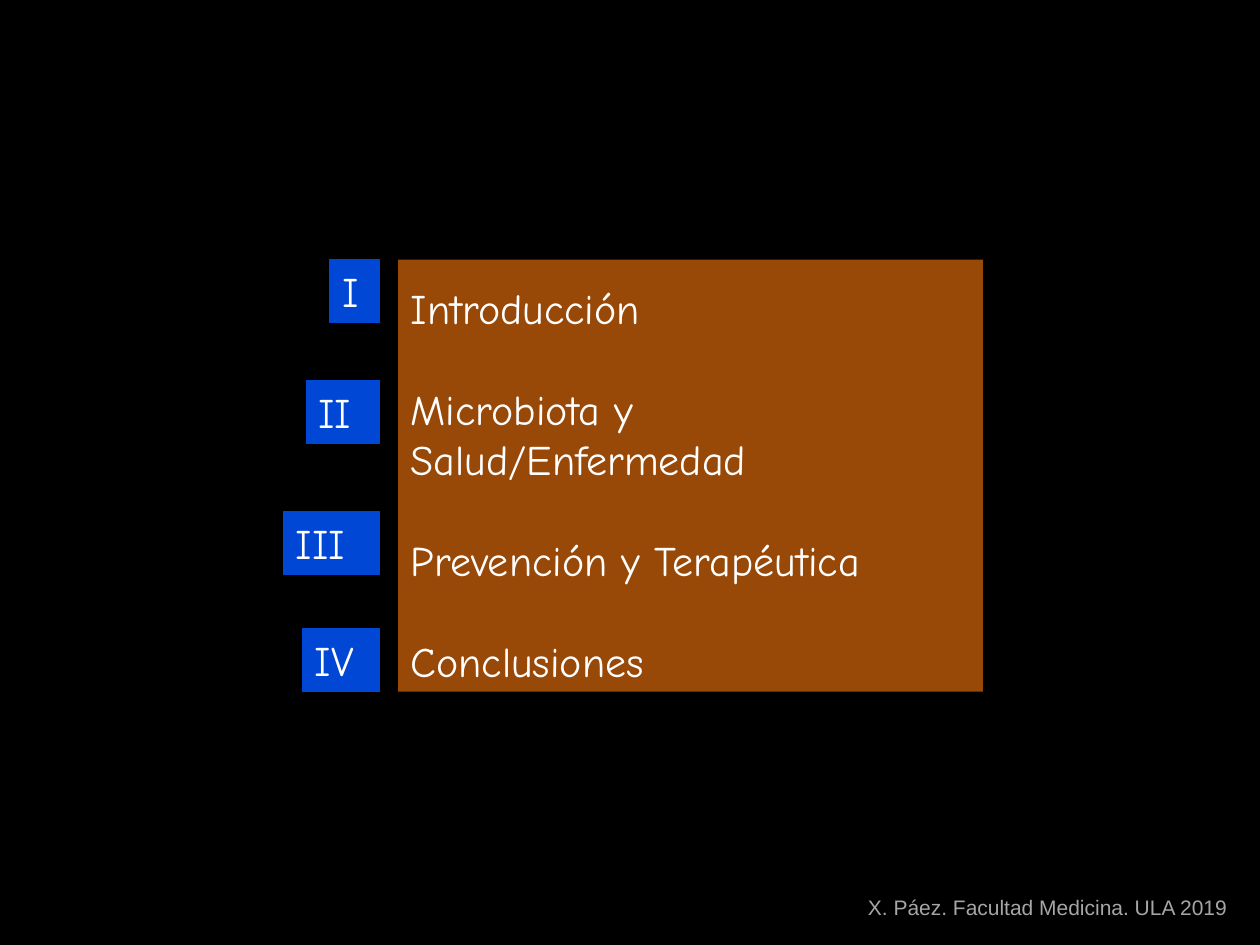
from pptx import Presentation
from pptx import util as u
from pptx.dml.color import RGBColor
from pptx.enum import shapes, text
from pptx.oxml.ns import qn

BLACK = RGBColor(0x00, 0x00, 0x00)
WHITE = RGBColor(0xFF, 0xFF, 0xFF)
BLUE = RGBColor(0x00, 0x47, 0xD6)
BROWN = RGBColor(0x98, 0x48, 0x07)
GRAY = RGBColor(0xA6, 0xA6, 0xA6)

LABEL_RIGHT = 3.01
LABEL_HEIGHT = 0.5
LABELS = [("I", 2.06, 0.39), ("II", 3.02, 0.58), ("III", 4.06, 0.76), ("IV", 4.99, 0.61)]
TOPICS = ["Introducción", "Microbiota y Salud/Enfermedad", "Prevención y Terapéutica", "Conclusiones"]


def place(shape, left, top, width, height):
    shape.left, shape.top = u.Inches(left), u.Inches(top)
    shape.width, shape.height = u.Inches(width), u.Inches(height)


def add_run(paragraph, words, font_name, size, color):
    run = paragraph.add_run()
    run.text = words
    run.font.name = font_name
    run.font.size = u.Pt(size)
    run.font.color.rgb = color


presentation = Presentation()
presentation.slide_width = u.Inches(10)
presentation.slide_height = u.Inches(7.5)
slide = presentation.slides.add_slide(presentation.slide_layouts[1])
slide.background.fill.solid()
slide.background.fill.fore_color.rgb = BLACK
title = slide.shapes.title
title.element.getparent().remove(title.element)

topics = slide.placeholders[1]
place(topics, 3.16, 2.06, 4.64, 3.43)
topics.fill.solid()
topics.fill.fore_color.rgb = BROWN
frame = topics.text_frame
frame.auto_size = text.MSO_AUTO_SIZE.NONE
frame.vertical_anchor = text.MSO_ANCHOR.TOP
frame.margin_top = u.Inches(0.18)
for index, topic in enumerate(TOPICS):
    paragraph = frame.add_paragraph() if index else frame.paragraphs[0]
    properties = paragraph._p.get_or_add_pPr()
    properties.set("marL", "0")
    properties.set("indent", "0")
    properties.append(properties.makeelement(qn("a:buNone"), {}))
    paragraph.space_before = u.Pt(28.8 if index else 0)
    add_run(paragraph, topic, "Comic Neue", 24, WHITE)

for numeral, top, width in LABELS:
    label = slide.shapes.add_shape(shapes.MSO_SHAPE.RECTANGLE, 0, 0, 0, 0)
    place(label, LABEL_RIGHT - width, top, width, LABEL_HEIGHT)
    label.shadow.inherit = False
    label.fill.solid()
    label.fill.fore_color.rgb = BLUE
    label.line.color.rgb = BLUE
    label.line.width = u.Pt(0.75)
    label.text_frame.vertical_anchor = text.MSO_ANCHOR.TOP
    paragraph = label.text_frame.paragraphs[0]
    paragraph.alignment = text.PP_ALIGN.LEFT
    add_run(paragraph, numeral, "Comic Neue", 24, WHITE)

credit = slide.shapes.add_textbox(0, 0, 0, 0)
place(credit, 6.79, 7.05, 3.08, 0.3)
credit.text_frame.word_wrap = False
add_run(credit.text_frame.paragraphs[0], "X. Páez. Facultad Medicina. ULA 2019", "Arial", 12, GRAY)

presentation.save("out.pptx")
